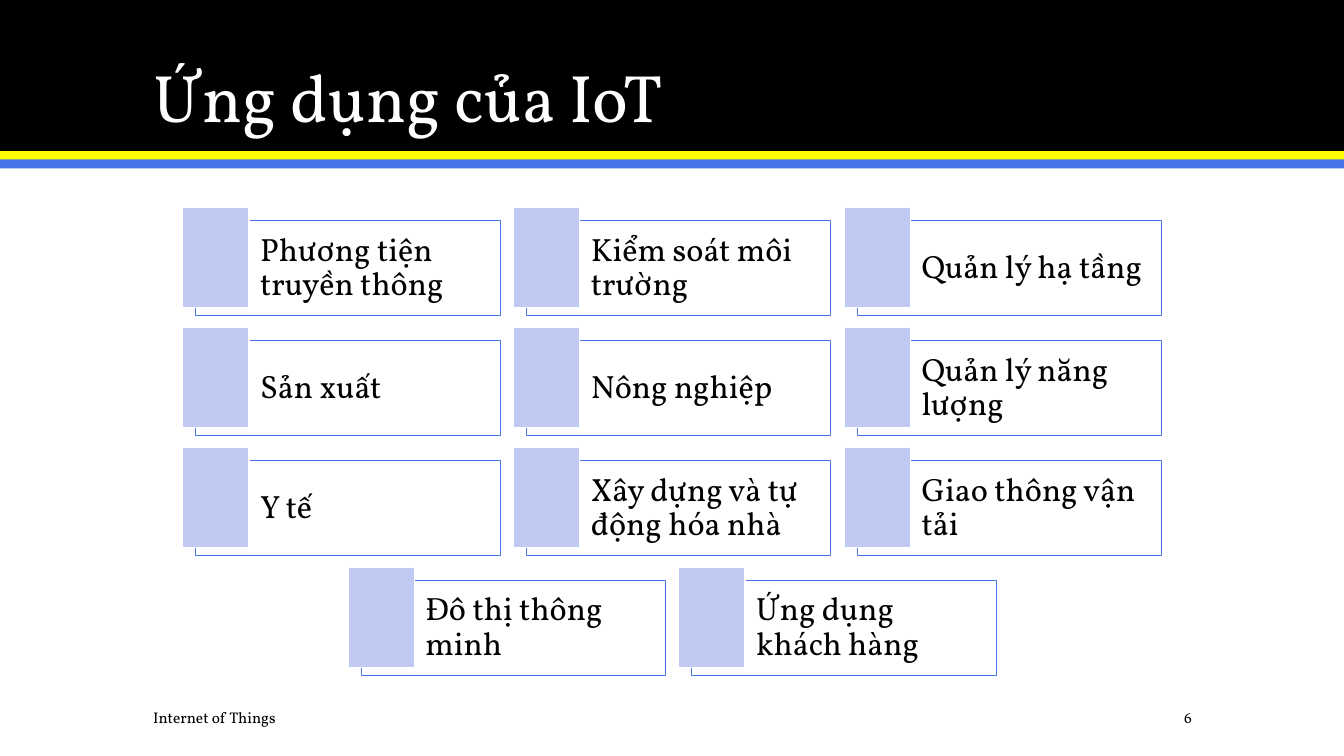
import dataclasses
import typing

import lxml.etree
import pptx
import pptx.dml.color
import pptx.enum.shapes
import pptx.enum.text
import pptx.oxml.ns
import pptx.util

EMU_PER_PX = 9144
FONT = "Vollkorn"
BLACK, WHITE, YELLOW, BLUE, LILAC = "000000", "FFFFFF", "FFFF00", "4775E7", "C1CAF3"
ALIGN = pptx.enum.text.PP_ALIGN
ANCHOR = pptx.enum.text.MSO_ANCHOR

SLIDE_W, SLIDE_H = 1333, 750
CARD_LEFT, CARD_TOP, CARD_W, CARD_H = 194, 219, 302, 94
PITCH_X, PITCH_Y, COLUMNS = 328, 119, 3
TAB_SHIFT, TAB_W, TAB_H = 13, 66, 99


@dataclasses.dataclass(frozen=True)
class Box:
    left: int
    top: int
    width: int
    height: int


@dataclasses.dataclass(frozen=True)
class Style:
    fill: str
    line: typing.Optional[str] = None
    weight: float = 0
    opacity: int = 100


@dataclasses.dataclass(frozen=True)
class Label:
    text: str
    size: int
    color: str = BLACK
    align: typing.Any = ALIGN.LEFT
    anchor: typing.Any = ANCHOR.MIDDLE
    spacing: float = 1.0
    inset: typing.Optional[int] = None


BANDS = [
    (Box(0, 0, SLIDE_W, 150), Style(BLACK)),
    (Box(0, 150, SLIDE_W, 9), Style(YELLOW)),
    (Box(0, 158, SLIDE_W, 9), Style(BLUE)),
]
CARD_STYLE = Style(WHITE, BLUE, 0.5, 40)
TAB_STYLE = Style(LILAC, WHITE, 1)
APPLICATIONS = [
    "Phương tiện truyền thông", "Kiểm soát môi trường", "Quản lý hạ tầng",
    "Sản xuất", "Nông nghiệp", "Quản lý năng lượng",
    "Y tế", "Xây dựng và tự động hóa nhà", "Giao thông vận tải",
    "Đô thị thông minh", "Ứng dụng khách hàng",
]
FOOTERS = [
    (Box(1042, 697, 150, 30), Label("6", 11, align=ALIGN.RIGHT)),
    (Box(142, 697, 683, 30), Label("Internet of Things", 11)),
]


def px(value: int) -> pptx.util.Emu:
    return pptx.util.Emu(value * EMU_PER_PX)


def rgb(value: str) -> pptx.dml.color.RGBColor:
    return pptx.dml.color.RGBColor.from_string(value)


def assign(target: typing.Any, values: typing.Dict[str, typing.Any]) -> None:
    for name, value in values.items():
        setattr(target, name, value)


def place(sp: typing.Any, box: Box) -> None:
    assign(sp, {name: px(value) for name, value in dataclasses.asdict(box).items()})


def write(sp: typing.Any, label: Label) -> None:
    tf = sp.text_frame
    assign(tf, {"word_wrap": True, "vertical_anchor": label.anchor,
                "auto_size": pptx.enum.text.MSO_AUTO_SIZE.NONE})
    if label.inset is not None:
        assign(tf, {"margin_left": px(label.inset), "margin_right": px(10),
                    "margin_top": px(10), "margin_bottom": px(10)})
    p = tf.paragraphs[0]
    assign(p, {"alignment": label.align, "line_spacing": label.spacing})
    r = p.add_run()
    r.text = label.text
    assign(r.font, {"name": FONT, "size": pptx.util.Pt(label.size)})
    r.font.color.rgb = rgb(label.color)


def add_rect(slide: typing.Any, box: Box, style: Style) -> typing.Any:
    kind = pptx.enum.shapes.MSO_SHAPE.RECTANGLE
    sp = slide.shapes.add_shape(kind, 0, 0, 0, 0)
    place(sp, box)
    sp.shadow.inherit = False
    sp.fill.solid()
    sp.fill.fore_color.rgb = rgb(style.fill)
    if style.opacity < 100:
        qn = pptx.oxml.ns.qn
        color = sp.element.spPr.find(qn("a:solidFill")).find(qn("a:srgbClr"))
        alpha = lxml.etree.SubElement(color, qn("a:alpha"))
        alpha.set("val", str(style.opacity * 1000))
    if style.line:
        sp.line.color.rgb = rgb(style.line)
        sp.line.width = pptx.util.Pt(style.weight)
    else:
        sp.line.fill.background()
    return sp


def add_card(slide: typing.Any, left: int, top: int, text: str) -> None:
    card = add_rect(slide, Box(left, top, CARD_W, CARD_H), CARD_STYLE)
    write(card, Label(text, 23, spacing=0.9, inset=64))
    add_rect(slide, Box(left - TAB_SHIFT, top - TAB_SHIFT, TAB_W, TAB_H), TAB_STYLE)


def add_cards(slide: typing.Any) -> None:
    for row, start in enumerate(range(0, len(APPLICATIONS), COLUMNS)):
        texts = APPLICATIONS[start:start + COLUMNS]
        left = CARD_LEFT + (COLUMNS - len(texts)) * PITCH_X // 2
        for col, text in enumerate(texts):
            add_card(slide, left + col * PITCH_X, CARD_TOP + row * PITCH_Y, text)


def main() -> None:
    prs = pptx.Presentation()
    assign(prs, {"slide_width": px(SLIDE_W), "slide_height": px(SLIDE_H)})
    slide = prs.slides.add_slide(prs.slide_layouts[5])
    for box, style in BANDS:
        add_rect(slide, box, style)
    title = slide.shapes.title
    title.element.getparent().append(title.element)
    place(title, Box(142, 28, 1050, 113))
    write(title, Label("Ứng dụng của IoT", 48, WHITE, anchor=ANCHOR.BOTTOM, spacing=0.9))
    add_cards(slide)
    for box, label in FOOTERS:
        sp = slide.shapes.add_textbox(0, 0, 0, 0)
        place(sp, box)
        write(sp, label)
    prs.save("out.pptx")


if __name__ == "__main__":
    main()
